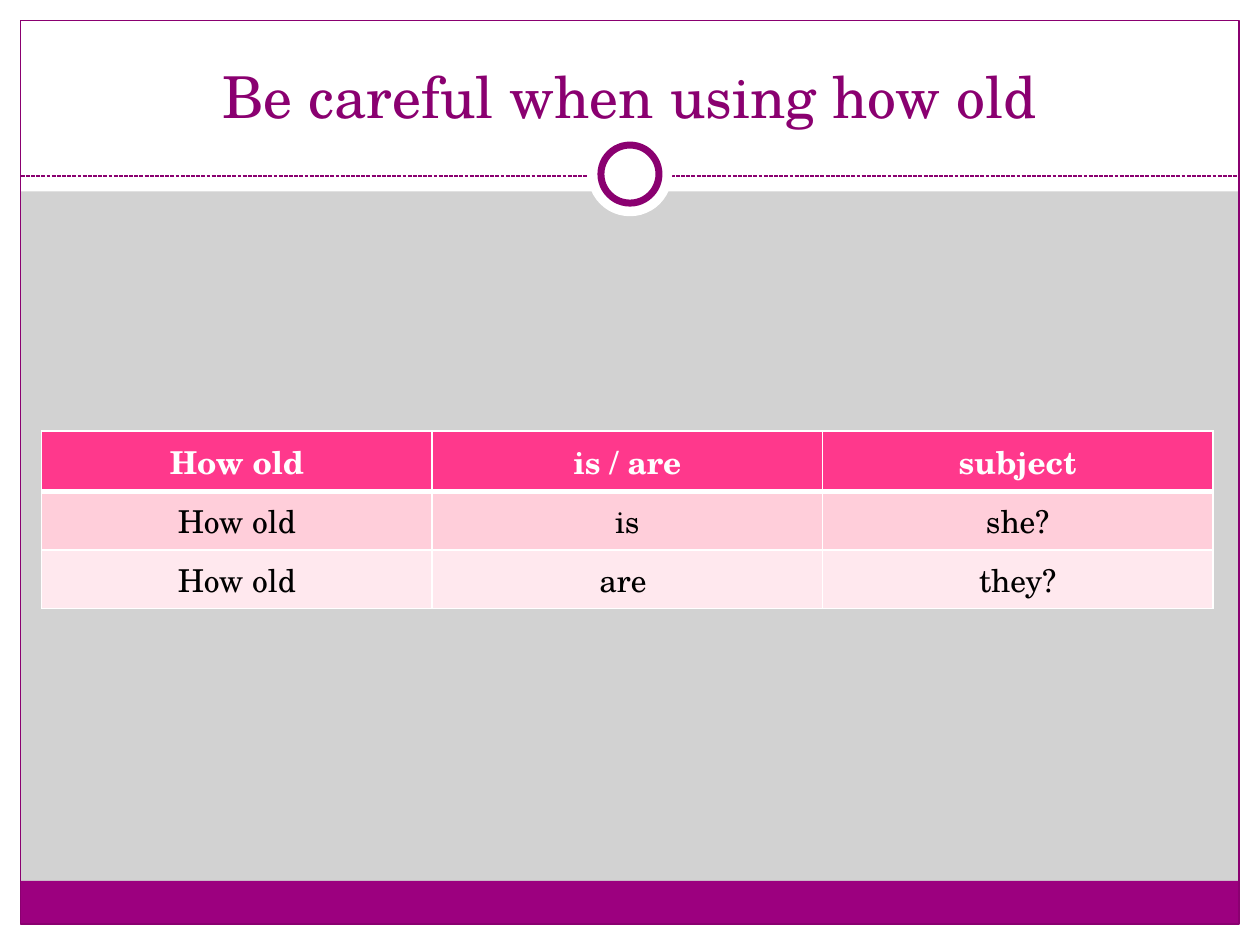
from dataclasses import dataclass

from lxml import etree
from pptx import Presentation
from pptx import util as u
from pptx.dml.color import RGBColor
from pptx.enum import dml, shapes, text
from pptx.oxml.ns import qn

TITLE = "Be careful when using how old"
ROWS = [
    ("How old", "is / are", "subject"),
    ("How old", "is", "she?"),
    ("How old", "are ", "they?"),
]


@dataclass(frozen=True)
class Theme:
    font: str = "TeX Gyre Schola"
    title_size: int = 33
    table_size: int = 18
    background: str = "D2D2D2"
    white: str = "FFFFFF"
    black: str = "000000"
    purple: str = "8A0070"
    footer: str = "9C007F"
    row_fills: tuple = ("FF388C", "FFCEDA", "FFE8EE")


THEME = Theme()
WIDTH, HEIGHT, MARGIN = 25.4, 19.05, 0.42
HEADER_HEIGHT, FOOTER_HEIGHT = 3.86, 0.87
DIVIDER_Y = 3.55
RING_Y = 3.51
TABLE_LEFT, TABLE_TOP, COLUMN_WIDTH = 0.84, 8.69, 7.87
ROW_HEIGHTS = (1.22, 1.18, 1.18)


def color(value):
    return RGBColor.from_string(value)


def add_shape(slide, box, fill=None, line=None, line_width=0.75,
              kind=shapes.MSO_SHAPE.RECTANGLE):
    shape = slide.shapes.add_shape(kind, *map(u.Cm, box))
    shape.shadow.inherit = False
    if fill:
        shape.fill.solid()
        shape.fill.fore_color.rgb = color(fill)
    else:
        shape.fill.background()
    if line:
        shape.line.color.rgb = color(line)
        shape.line.width = u.Pt(line_width)
    else:
        shape.line.fill.background()


def add_circle(slide, diameter, **style):
    """Centre a circle on the slide's middle axis, over the divider."""
    box = (WIDTH / 2 - diameter / 2, RING_Y - diameter / 2, diameter, diameter)
    add_shape(slide, box, fill=THEME.white, kind=shapes.MSO_SHAPE.OVAL, **style)


def add_divider(slide):
    line = slide.shapes.add_connector(
        shapes.MSO_CONNECTOR.STRAIGHT,
        *map(u.Cm, (MARGIN, DIVIDER_Y, WIDTH - MARGIN, DIVIDER_Y)))
    line.line.color.rgb = color(THEME.purple)
    line.line.width = u.Pt(0.75)
    line.line.dash_style = dml.MSO_LINE.SQUARE_DOT
    etree.SubElement(line._element.spPr, qn("a:effectLst"))


def add_frame(slide):
    inner_width = WIDTH - 2 * MARGIN
    bottom = HEIGHT - MARGIN
    for box in (
        (0, bottom, WIDTH, MARGIN),
        (0, 0, WIDTH, HEADER_HEIGHT),
        (0, 0, MARGIN, HEIGHT),
        (WIDTH - MARGIN, 0, MARGIN, HEIGHT),
    ):
        add_shape(slide, box, fill=THEME.white)
    add_shape(slide, (MARGIN, bottom - FOOTER_HEIGHT, inner_width, FOOTER_HEIGHT),
              fill=THEME.footer)
    add_shape(slide, (MARGIN, MARGIN, inner_width, HEIGHT - 2 * MARGIN),
              line=THEME.purple)
    add_divider(slide)
    add_circle(slide, 1.7)
    add_circle(slide, 1.17, line=THEME.purple, line_width=4)


def write(frame, content, size, ink, bold=False):
    paragraph = frame.paragraphs[0]
    paragraph.text = content
    paragraph.alignment = text.PP_ALIGN.CENTER
    font = paragraph.font
    font.name, font.size, font.bold = THEME.font, u.Pt(size), bold
    font.color.rgb = color(ink)


def add_title(slide):
    box = slide.shapes.add_textbox(*map(u.Cm, (0.84, 0.64, 23.7, 2.11)))
    frame = box.text_frame
    frame.word_wrap = True
    frame.vertical_anchor = text.MSO_ANCHOR.BOTTOM
    write(frame, TITLE, THEME.title_size, THEME.purple)


def set_borders(cell, top, bottom):
    """Draw white cell borders; top and bottom are widths in points."""
    properties = cell._tc.get_or_add_tcPr()
    widths = {"L": 1, "R": 1, "T": top, "B": bottom}
    for index, (side, width) in enumerate(widths.items()):
        border = etree.Element(qn(f"a:ln{side}"), w=str(u.Pt(width)))
        fill = etree.SubElement(border, qn("a:solidFill"))
        etree.SubElement(fill, qn("a:srgbClr"), val=THEME.white)
        properties.insert(index, border)


def add_table(slide):
    columns = len(ROWS[0])
    table = slide.shapes.add_table(
        len(ROWS), columns, u.Cm(TABLE_LEFT), u.Cm(TABLE_TOP),
        u.Cm(columns * COLUMN_WIDTH), u.Cm(sum(ROW_HEIGHTS))).table
    for column in table.columns:
        column.width = u.Cm(COLUMN_WIDTH)
    for r, (row, height, fill) in enumerate(zip(ROWS, ROW_HEIGHTS, THEME.row_fills)):
        table.rows[r].height = u.Cm(height)
        header = r == 0
        for c, content in enumerate(row):
            cell = table.cell(r, c)
            cell.fill.solid()
            cell.fill.fore_color.rgb = color(fill)
            write(cell.text_frame, content, THEME.table_size,
                  THEME.white if header else THEME.black, bold=header)
            set_borders(cell, top=3 if r == 1 else 1, bottom=3 if header else 1)


def main():
    presentation = Presentation()
    presentation.slide_width, presentation.slide_height = u.Cm(WIDTH), u.Cm(HEIGHT)
    slide = presentation.slides.add_slide(presentation.slide_layouts[6])
    slide.background.fill.solid()
    slide.background.fill.fore_color.rgb = color(THEME.background)
    add_frame(slide)
    add_title(slide)
    add_table(slide)
    presentation.save("out.pptx")


if __name__ == "__main__":
    main()
